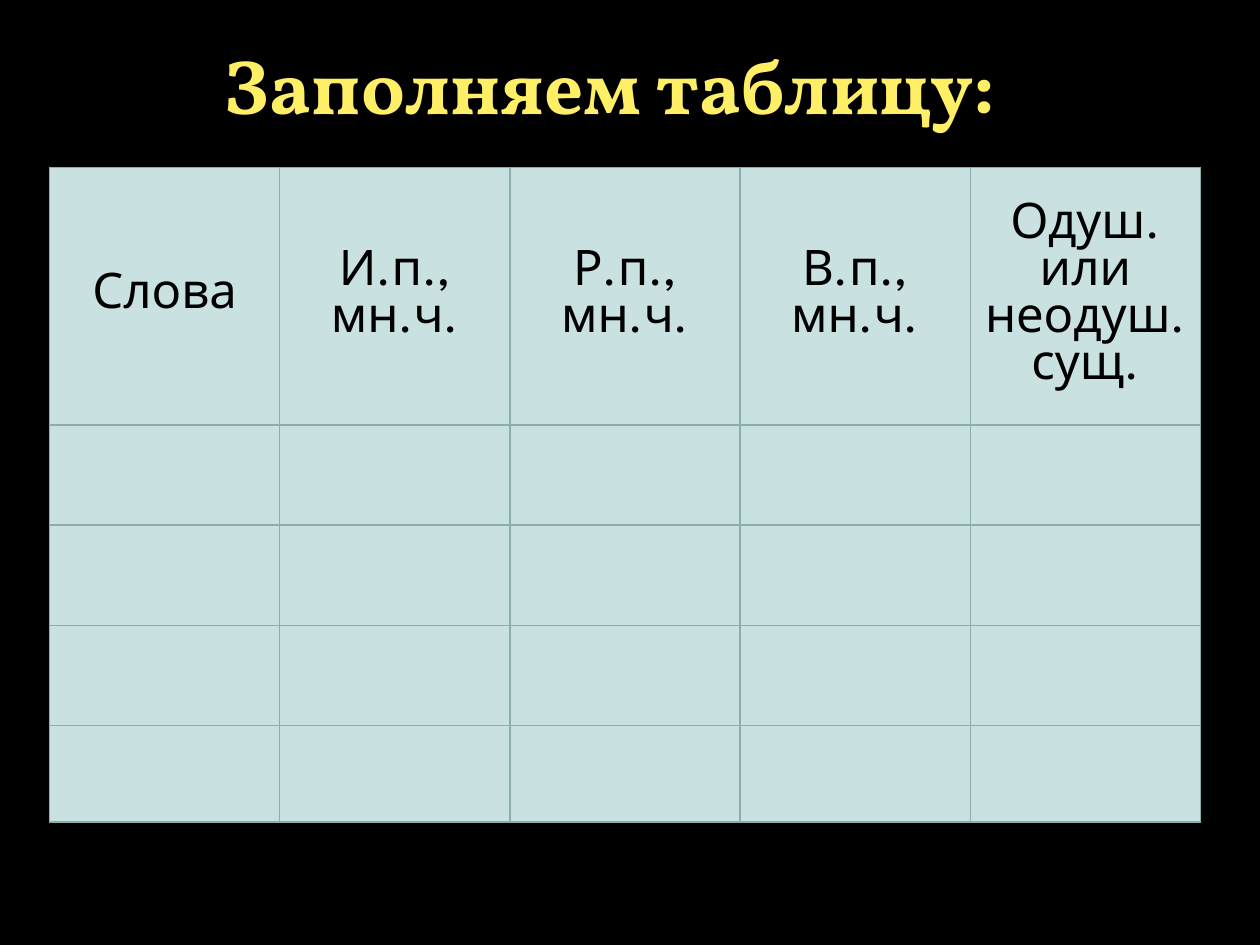
from dataclasses import dataclass

from lxml.etree import SubElement
from pptx import Presentation
from pptx.dml.color import RGBColor
from pptx.enum.text import MSO_ANCHOR, PP_ALIGN
from pptx.oxml.ns import qn
from pptx.slide import Slide
from pptx.table import _Cell
from pptx.text.text import TextFrame
from pptx.util import Cm, Pt

COLORS = {
    "background": "000000",
    "title": "FFEF66",
    "text": "000000",
    "cell": "C9E1E1",
    "border": "8CADAE",
}
HEADERS = ["Слова", "И.п., мн.ч.", "Р.п., мн.ч.", "В.п., мн.ч.", "Одуш. или неодуш. сущ."]
ROW_HEIGHTS = [5.1, 2.02, 2.02, 2.02, 1.94]
COLUMN_WIDTH = 4.64


@dataclass(frozen=True)
class TextStyle:
    """Look of one kind of text."""

    font: str
    size: int
    color: str
    bold: bool = False
    spacing: float = 1.0


TITLE_STYLE = TextStyle("Vollkorn", 44, "title", bold=True)
HEADER_STYLE = TextStyle("League Spartan", 28, "text", spacing=1.04)


def color(name: str) -> RGBColor:
    """Return the named colour."""
    return RGBColor.from_string(COLORS[name])


def write(frame: TextFrame, text: str, style: TextStyle) -> None:
    """Write one centred paragraph in the given style."""
    para = frame.paragraphs[0]
    para.alignment = PP_ALIGN.CENTER
    para.line_spacing = style.spacing
    span = para.add_run()
    span.text = text
    span.font.name = style.font
    span.font.size = Pt(style.size)
    span.font.bold = style.bold
    span.font.color.rgb = color(style.color)


def style_cell(cell: _Cell) -> None:
    """Give a cell its borders, fill and vertical centring."""
    properties = cell._tc.get_or_add_tcPr()
    for side in ("a:lnL", "a:lnR", "a:lnT", "a:lnB"):
        line = SubElement(properties, qn(side), w=str(Pt(0.9)))
        fill = SubElement(line, qn("a:solidFill"))
        SubElement(fill, qn("a:srgbClr"), val=COLORS["border"])
    cell.fill.solid()
    cell.fill.fore_color.rgb = color("cell")
    cell.vertical_anchor = MSO_ANCHOR.MIDDLE


def add_title(page: Slide, text: str) -> None:
    """Add the heading above the table."""
    box = page.shapes.add_textbox(Cm(2.77), Cm(0.64), Cm(19.08), Cm(2.1))
    box.text_frame.word_wrap = True
    box.text_frame.vertical_anchor = MSO_ANCHOR.BOTTOM
    write(box.text_frame, text, TITLE_STYLE)


def add_word_table(page: Slide) -> None:
    """Add the table with its header row and empty rows to fill in."""
    table = page.shapes.add_table(
        len(ROW_HEIGHTS), len(HEADERS), Cm(1), Cm(3.38),
        Cm(COLUMN_WIDTH * len(HEADERS)), Cm(sum(ROW_HEIGHTS)),
    ).table
    for column in table.columns:
        column.width = Cm(COLUMN_WIDTH)
    for row, height in zip(table.rows, ROW_HEIGHTS):
        row.height = Cm(height)
    for cell in table.iter_cells():
        style_cell(cell)
    for cell, header in zip(table.rows[0].cells, HEADERS):
        write(cell.text_frame, header, HEADER_STYLE)


def main() -> None:
    """Build and save the deck."""
    deck = Presentation()
    deck.slide_width, deck.slide_height = Cm(25.4), Cm(19.05)
    page = deck.slides.add_slide(deck.slide_layouts[6])
    page.background.fill.solid()
    page.background.fill.fore_color.rgb = color("background")
    add_title(page, "Заполняем таблицу:")
    add_word_table(page)
    deck.save("out.pptx")


if __name__ == "__main__":
    main()
